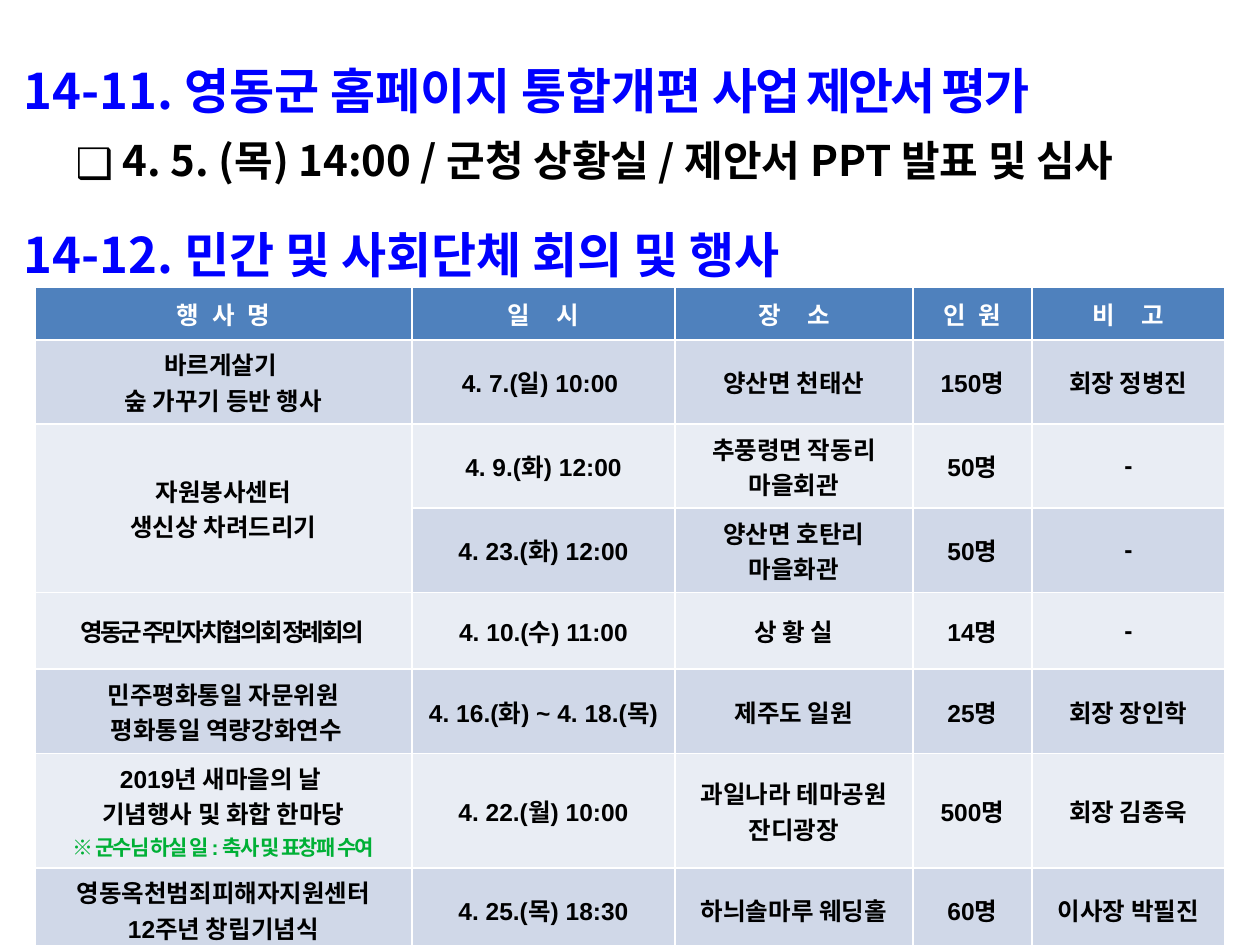
from lxml.etree import SubElement
from pptx import Presentation
from pptx.dml.color import RGBColor
from pptx.enum.text import MSO_ANCHOR as ANCHOR, MSO_AUTO_SIZE as AUTOSIZE, PP_ALIGN as ALIGN
from pptx.oxml.ns import qn
from pptx.util import Emu, Pt

COLORS = {"heading": "0000FF", "text": "000000", "white": "FFFFFF", "note": "00B036",
          "header": "4F81BD", "dark": "D0D8E8", "light": "E9EDF4"}
KOREAN = "Noto Sans CJK KR"


def px(n):
    return Emu(round(n * 914400 / 126))


def rgb(name):
    return RGBColor.from_string(COLORS[name])


def add_text(p, text, size=14, color="text", font="Arial", spacing=0):
    """Add one bold run; spacing is the letter spacing in points."""
    r = p.add_run()
    r.text = text
    r.font.size, r.font.bold, r.font.name = Pt(size), True, font
    r.font.color.rgb = rgb(color)
    rPr = r._r.get_or_add_rPr()
    if spacing:
        rPr.set("spc", str(round(spacing * 100)))
    SubElement(rPr, qn("a:ea")).set("typeface", KOREAN)


class Deck:
    def __init__(self, width, height):
        self.prs = Presentation()
        self.prs.slide_width, self.prs.slide_height = px(width), px(height)
        self.s = self.prs.slides.add_slide(self.prs.slide_layouts[5])

    def place(self, sp, left, top, width, height):
        sp.left, sp.top, sp.width, sp.height = map(px, (left, top, width, height))
        tf = sp.text_frame
        tf.auto_size, tf.word_wrap = AUTOSIZE.NONE, True
        tf.vertical_anchor = ANCHOR.TOP
        return tf

    def title(self, *box):
        return self.place(self.s.shapes.title, *box)

    def textbox(self, *box):
        return self.place(self.s.shapes.add_textbox(0, 0, 0, 0), *box)

    def heading(self, p, text, line_spacing, align=ALIGN.LEFT, tight=""):
        p.alignment, p.line_spacing = align, line_spacing
        add_text(p, text, 28, "heading", KOREAN)
        if tight:
            add_text(p, tight, 28, "heading", KOREAN, -1.5)

    def bullet(self, p, text, line_spacing):
        p.alignment, p.line_spacing, p.level = ALIGN.JUSTIFY, line_spacing, 1
        p.space_before = Pt(0)
        pPr = p._p.get_or_add_pPr()
        pPr.set("marL", str(px(63)))
        pPr.set("indent", "0")
        color = SubElement(pPr, qn("a:buClr"))
        SubElement(color, qn("a:srgbClr")).set("val", COLORS["text"])
        SubElement(pPr, qn("a:buFont")).set("typeface", KOREAN)
        SubElement(pPr, qn("a:buChar")).set("char", "❑")
        add_text(p, text, 24, font=KOREAN)

    def cell(self, cell, text, fill, formats):
        cell.fill.solid()
        cell.fill.fore_color.rgb = rgb(fill)
        cell.vertical_anchor = ANCHOR.MIDDLE
        tf = cell.text_frame
        for i, line in enumerate(text.split("\n")):
            p = tf.add_paragraph() if i else tf.paragraphs[0]
            p.alignment = ALIGN.CENTER
            add_text(p, line, **formats.get(line, {}))

    def table(self, left, top, widths, heights, rows, formats):
        table = self.s.shapes.add_table(len(rows), len(widths), px(left), px(top),
                                        px(sum(widths)), px(sum(heights))).table
        for column, width in zip(table.columns, widths):
            column.width = px(width)
        for i, (height, row) in enumerate(zip(heights, rows)):
            table.rows[i].height = px(height)
            fill = "header" if i == 0 else "dark" if i % 2 else "light"
            for j, text in enumerate(row):
                if text is None:  # continues the cell above
                    table.cell(i - 1, j).merge(table.cell(i, j))
                else:
                    self.cell(table.cell(i, j), text, fill, formats)


EVENTS = [
    ["행 사 명", "일 시", "장 소", "인 원", "비 고"],
    ["바르게살기 \n숲 가꾸기 등반 행사", "4. 7.(일) 10:00 ", "양산면 천태산", "150명", "회장 정병진"],
    ["자원봉사센터\n생신상 차려드리기", "4. 9.(화) 12:00", "추풍령면 작동리 마을회관", "50명", "-"],
    [None, "4. 23.(화) 12:00", "양산면 호탄리\n마을화관", "50명", "-"],
    ["영동군 주민자치협의회 정례회의 ", "4. 10.(수) 11:00", "상 황 실", "14명", "-"],
    ["민주평화통일 자문위원\n 평화통일 역량강화연수", "4. 16.(화) ~ 4. 18.(목)", "제주도 일원",
     "25명", "회장 장인학"],
    ["2019년 새마을의 날 \n기념행사 및 화합 한마당\n※ 군수님 하실 일 : 축사 및 표창패 수여",
     "4. 22.(월) 10:00", "과일나라 테마공원 잔디광장", "500명", "회장 김종욱"],
    ["영동옥천범죄피해자지원센터\n12주년 창립기념식", "4. 25.(목) 18:30", "하늬솔마루 웨딩홀",
     "60명", "이사장 박필진"],
]
# Lines that differ from the plain cell text
HEADER_SPACING = [2, 6, 6, 2, 6]
FORMATS = {label: {"color": "white", "spacing": spacing}
           for label, spacing in zip(EVENTS[0], HEADER_SPACING)}
FORMATS["영동군 주민자치협의회 정례회의 "] = {"spacing": -1.7}
FORMATS["※ 군수님 하실 일 : 축사 및 표창패 수여"] = {"size": 12, "color": "note", "spacing": -1}


def main():
    deck = Deck(1260, 945)

    # Proposal evaluation
    tf = deck.title(0, 37, 1260, 154)
    deck.heading(tf.paragraphs[0], " 14-11. 영동군 홈페이지 통합개편 ", 1.3, ALIGN.JUSTIFY,
                 tight="사업 제안서 평가")
    deck.bullet(tf.add_paragraph(), " 4. 5. (목) 14:00 / 군청 상황실 / 제안서 PPT 발표 및 심사", 1.3)

    # Meetings and events
    tf = deck.textbox(0, 189, 1260, 731)
    deck.heading(tf.paragraphs[0], " 14-12. 민간 및 사회단체 회의 및 행사", 1.5)
    deck.table(35, 287, [377, 263, 238, 119, 193], [53, 77, 68, 68, 77, 77, 100, 77],
               EVENTS, FORMATS)

    deck.prs.save("out.pptx")


if __name__ == "__main__":
    main()
